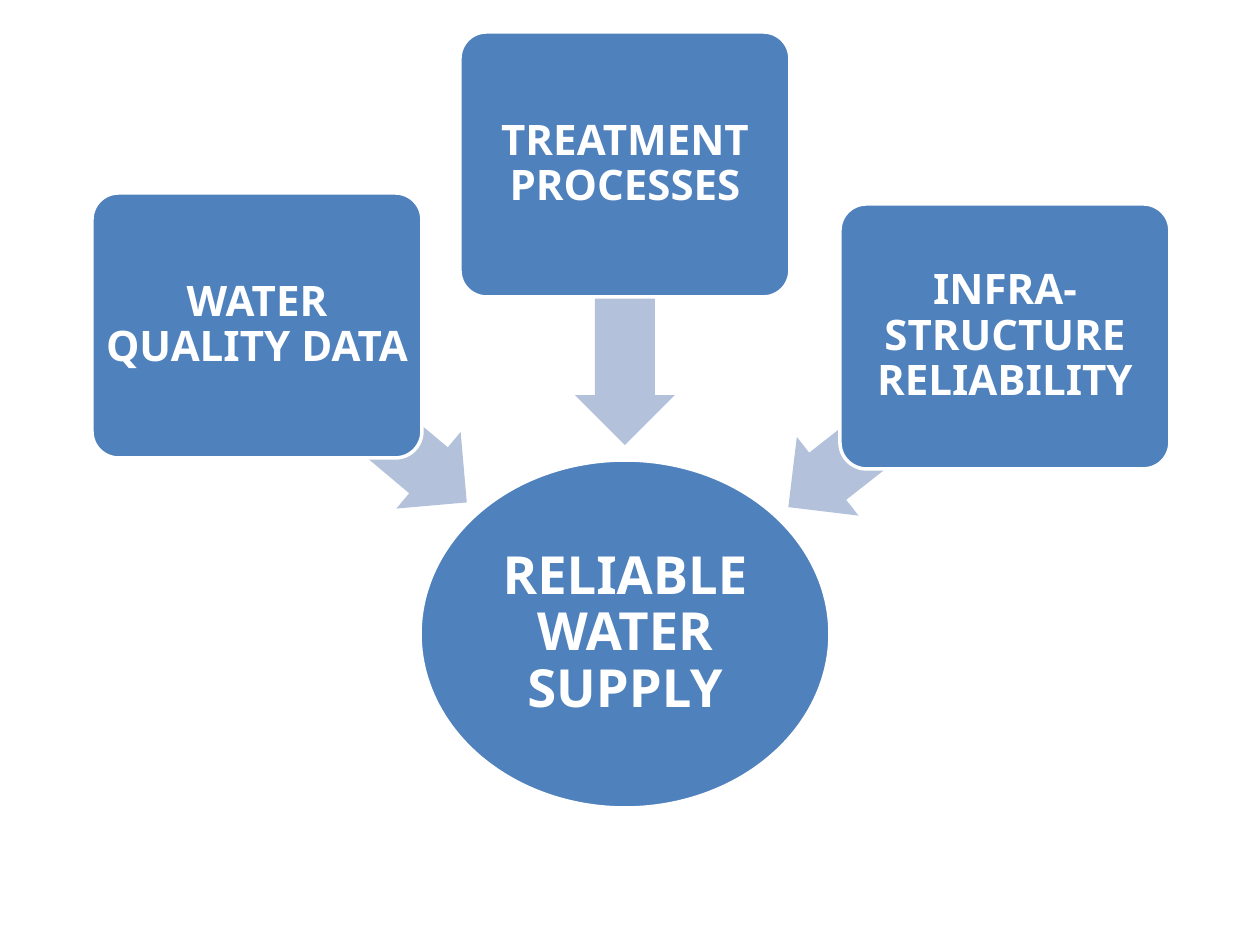
from pptx import Presentation
from pptx.dml.color import RGBColor
from pptx.enum.shapes import MSO_SHAPE
from pptx.enum.text import MSO_ANCHOR, PP_ALIGN
from pptx.util import Emu, Pt

BLUE = RGBColor(0x4F, 0x81, 0xBD)
PALE_BLUE = RGBColor(0xB3, 0xC1, 0xDB)
WHITE = RGBColor(0xFF, 0xFF, 0xFF)
FONT = "Noto Sans"
EMU_PER_PX = 914400 / 126


def px(length):
    return Emu(round(length * EMU_PER_PX))


def add_label_shape(kind, left, top, width, height, text, size, inset):
    shape = slide.shapes.add_shape(kind, px(left), px(top), px(width), px(height))
    shape.shadow.inherit = False
    shape.fill.solid()
    shape.fill.fore_color.rgb = BLUE
    shape.line.color.rgb = WHITE
    shape.line.width = Pt(2)
    text_frame = shape.text_frame
    text_frame.text = text
    text_frame.word_wrap = True
    text_frame.vertical_anchor = MSO_ANCHOR.MIDDLE
    text_frame.margin_left = text_frame.margin_right = px(inset)
    text_frame.margin_top = text_frame.margin_bottom = px(inset)
    paragraph = text_frame.paragraphs[0]
    paragraph.alignment = PP_ALIGN.CENTER
    paragraph.line_spacing = 0.9
    font = paragraph.runs[0].font
    font.name = FONT
    font.size = Pt(size)
    font.bold = True
    font.color.rgb = WHITE
    return shape


presentation = Presentation()
presentation.slide_width = px(1260)
presentation.slide_height = px(945)
slide = presentation.slides.add_slide(presentation.slide_layouts[6])

# Central goal
add_label_shape(MSO_SHAPE.OVAL, 420, 460, 410, 348, "RELIABLE WATER SUPPLY", 30, 2)

# Contributing factors: text, box left and top, arrow left, top, width and rotation
factors = [
    ("WATER QUALITY DATA", 92, 193, 224, 364, 275, 220),
    ("TREATMENT PROCESSES", 460, 32, 485, 255, 280, 270),
    ("INFRA-STRUCTURE RELIABILITY", 840, 204, 759, 372, 276, 321.9),
]
for text, box_left, box_top, arrow_left, arrow_top, arrow_width, rotation in factors:
    # Arrow towards the goal, partly behind its box
    arrow = slide.shapes.add_shape(
        MSO_SHAPE.LEFT_ARROW, px(arrow_left), px(arrow_top), px(arrow_width), px(100))
    arrow.adjustments[0] = 0.6
    arrow.adjustments[1] = 0.5
    arrow.rotation = rotation
    arrow.shadow.inherit = False
    arrow.fill.solid()
    arrow.fill.fore_color.rgb = PALE_BLUE
    arrow.line.fill.background()

    # Factor box
    box = add_label_shape(
        MSO_SHAPE.ROUNDED_RECTANGLE, box_left, box_top, 330, 265, text, 24, 5)
    box.adjustments[0] = 0.1

presentation.save("out.pptx")
